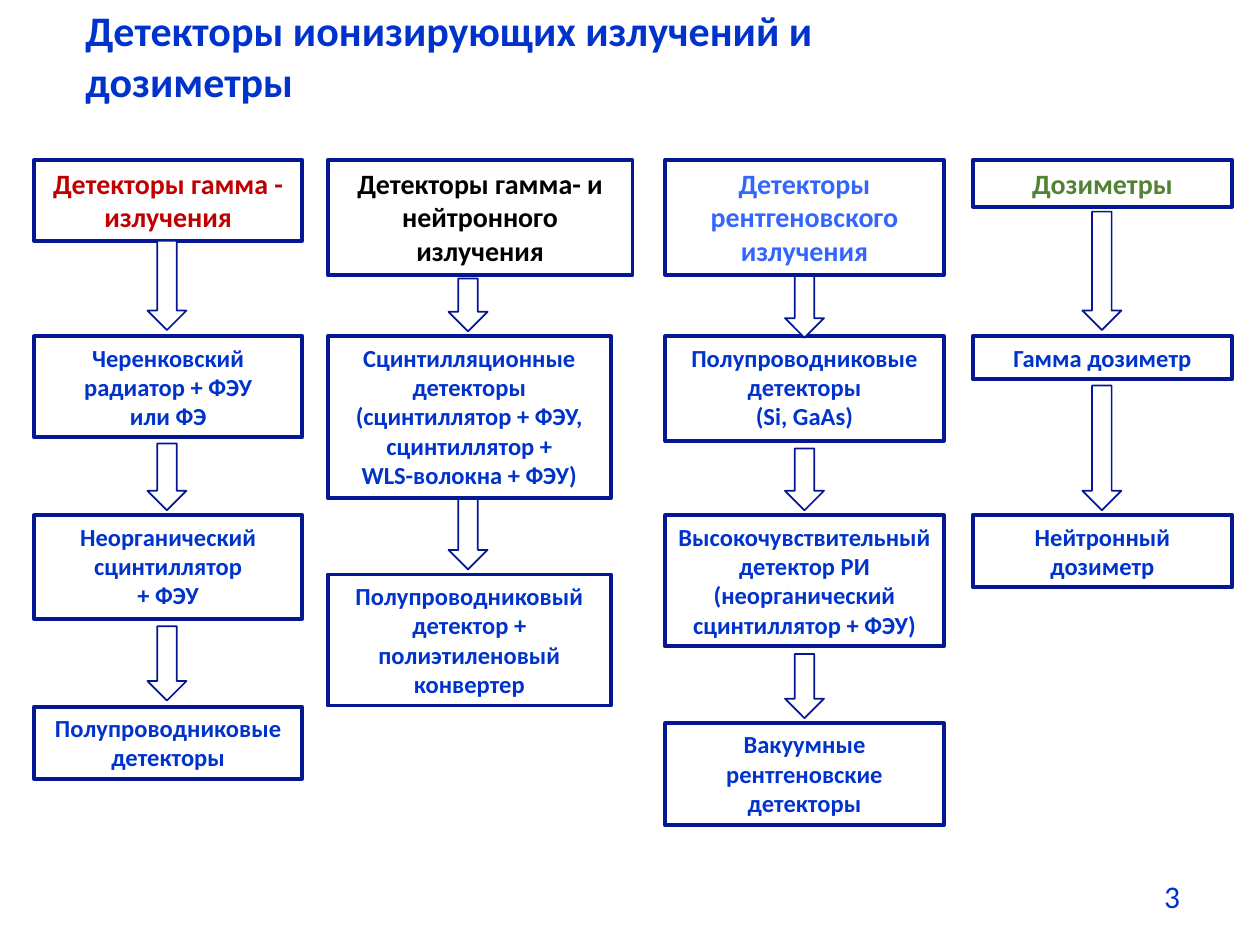
from dataclasses import dataclass

from pptx import Presentation
from pptx import util as u
from pptx.dml import color
from pptx.enum import shapes as s
from pptx.enum import text as t

NAVY = color.RGBColor(0x06, 0x17, 0x96)
BLUE = color.RGBColor(0x00, 0x33, 0xCC)
LIGHT_BLUE = color.RGBColor(0x33, 0x66, 0xFF)
RED = color.RGBColor(0xC0, 0x00, 0x00)
GREEN = color.RGBColor(0x54, 0x82, 0x35)
BLACK = color.RGBColor(0x00, 0x00, 0x00)
WHITE = color.RGBColor(0xFF, 0xFF, 0xFF)

HEAD_TOP, FIRST_TOP, SECOND_TOP = 1.27, 2.67, 4.09
ARROW_WIDTH = 0.31


@dataclass
class Step:
    top: float
    height: float
    text: str
    width: float | None = None  # the column's width unless given


@dataclass
class Arrow:
    top: float
    height: float


@dataclass
class Column:
    left: float
    width: float
    head_color: color.RGBColor
    arrow_left: float
    steps: list[Step]  # the first one is the heading
    arrows: list[Arrow]


COLUMNS = [
    Column(0.27, 2.13, RED, 1.17, [
        Step(HEAD_TOP, 0.64, "Детекторы гамма -\nизлучения"),
        Step(FIRST_TOP, 0.8, "Черенковский\nрадиатор + ФЭУ\nили ФЭ"),
        Step(SECOND_TOP, 0.82, "Неорганический\nсцинтиллятор\n+ ФЭУ"),
        Step(5.61, 0.57, "Полупроводниковые\nдетекторы"),
    ], [Arrow(1.91, 0.71), Arrow(3.52, 0.53), Arrow(4.97, 0.59)]),
    Column(2.6, 2.25, BLACK, 3.56, [
        Step(HEAD_TOP, 0.91, "Детекторы гамма- и нейтронного излучения", width=2.42),
        Step(FIRST_TOP, 1.28, "Сцинтилляционные\nдетекторы (сцинтиллятор + ФЭУ,\n"
                              "сцинтиллятор +\nWLS-волокна + ФЭУ)"),
        Step(4.56, 1.04, "Полупроводниковый\nдетектор + полиэтиленовый конвертер"),
    ], [Arrow(2.21, 0.42), Arrow(3.96, 0.56)]),
    Column(5.28, 2.21, LIGHT_BLUE, 6.23, [
        Step(HEAD_TOP, 0.91, "Детекторы\nрентгеновского излучения"),
        Step(FIRST_TOP, 0.83, "Полупроводниковые детекторы\n(Si, GaAs)"),
        Step(SECOND_TOP, 1.04, "Высокочувствительный\nдетектор РИ (неорганический\n"
                               "сцинтиллятор + ФЭУ)"),
        Step(5.74, 0.81, "Вакуумные рентгеновские\nдетекторы"),
    ], [Arrow(2.19, 0.49), Arrow(3.56, 0.49), Arrow(5.19, 0.51)]),
    Column(7.72, 2.06, GREEN, 8.59, [
        Step(HEAD_TOP, 0.37, "Дозиметры"),
        Step(FIRST_TOP, 0.34, "Гамма дозиметр"),
        Step(SECOND_TOP, 0.57, "Нейтронный дозиметр"),
    ], [Arrow(1.68, 0.94), Arrow(3.06, 0.99)]),
]


def write(box, content: str, *, size: float, ink=BLUE, bold=True,
          align=t.PP_ALIGN.LEFT, wrap=True, grow=True) -> None:
    """Fill a box with one paragraph per line of the content."""
    frame = box.text_frame
    frame.word_wrap = wrap
    frame.auto_size = t.MSO_AUTO_SIZE.SHAPE_TO_FIT_TEXT if grow else t.MSO_AUTO_SIZE.NONE
    frame.vertical_anchor = t.MSO_ANCHOR.TOP
    for index, line in enumerate(content.split("\n")):
        para = frame.add_paragraph() if index else frame.paragraphs[0]
        para.alignment = align
        span = para.add_run()
        span.text = line
        span.font.name = "Calibri"
        span.font.size = u.Pt(size)
        span.font.bold = bold
        span.font.color.rgb = ink


def add_outlined(page, kind, left: float, top: float, width: float, height: float,
                 line_width: float):
    shape = page.shapes.add_shape(kind, u.Inches(left), u.Inches(top),
                                  u.Inches(width), u.Inches(height))
    shape.shadow.inherit = False
    shape.line.color.rgb = NAVY
    shape.line.width = u.Pt(line_width)
    return shape


def draw_column(page, column: Column) -> None:
    for index, step in enumerate(column.steps):
        box = add_outlined(page, s.MSO_SHAPE.RECTANGLE, column.left, step.top,
                           step.width or column.width, step.height, 2.25)
        box.fill.background()
        is_head = index == 0
        write(box, step.text, size=16 if is_head else 14,
              ink=column.head_color if is_head else BLUE, align=t.PP_ALIGN.CENTER)
    for arrow in column.arrows:
        shape = add_outlined(page, s.MSO_SHAPE.DOWN_ARROW, column.arrow_left, arrow.top,
                             ARROW_WIDTH, arrow.height, 1)
        shape.fill.solid()
        shape.fill.fore_color.rgb = WHITE


def main() -> None:
    deck = Presentation()
    deck.slide_width, deck.slide_height = u.Inches(10), u.Inches(7.5)
    page = deck.slides.add_slide(deck.slide_layouts[6])

    # Title
    title = page.shapes.add_textbox(u.Inches(0.58), u.Inches(-0.01),
                                    u.Inches(6.11), u.Inches(0.91))
    write(title, "Детекторы ионизирующих излучений и\nдозиметры", size=24, wrap=False)

    # Detector families, one column each
    for column in COLUMNS:
        draw_column(page, column)

    # Page number
    number = page.shapes.add_textbox(u.Inches(9.14), u.Inches(6.91),
                                     u.Inches(0.28), u.Inches(0.59))
    write(number, "3", size=18, bold=False, grow=False)

    deck.save("out.pptx")


if __name__ == "__main__":
    main()
